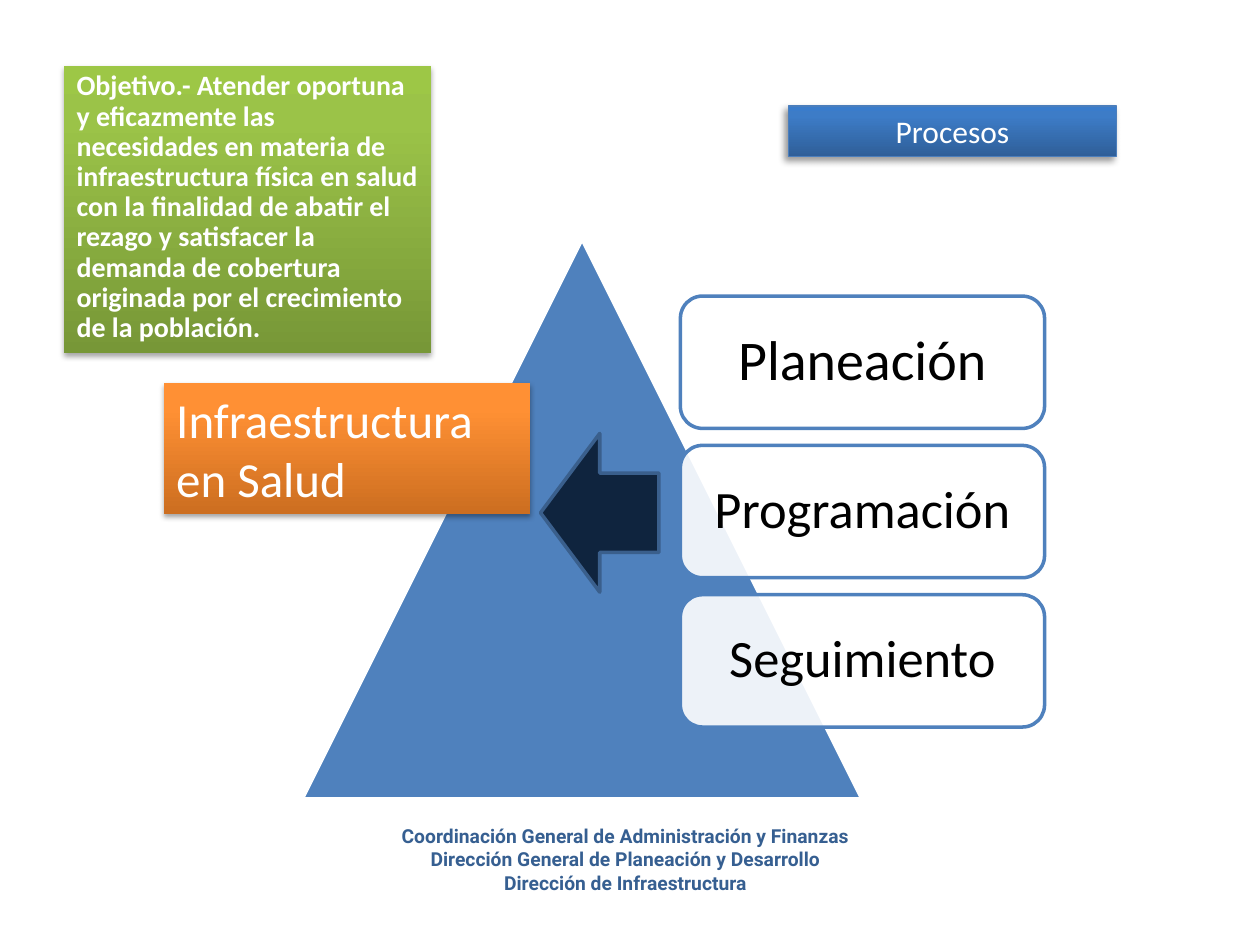
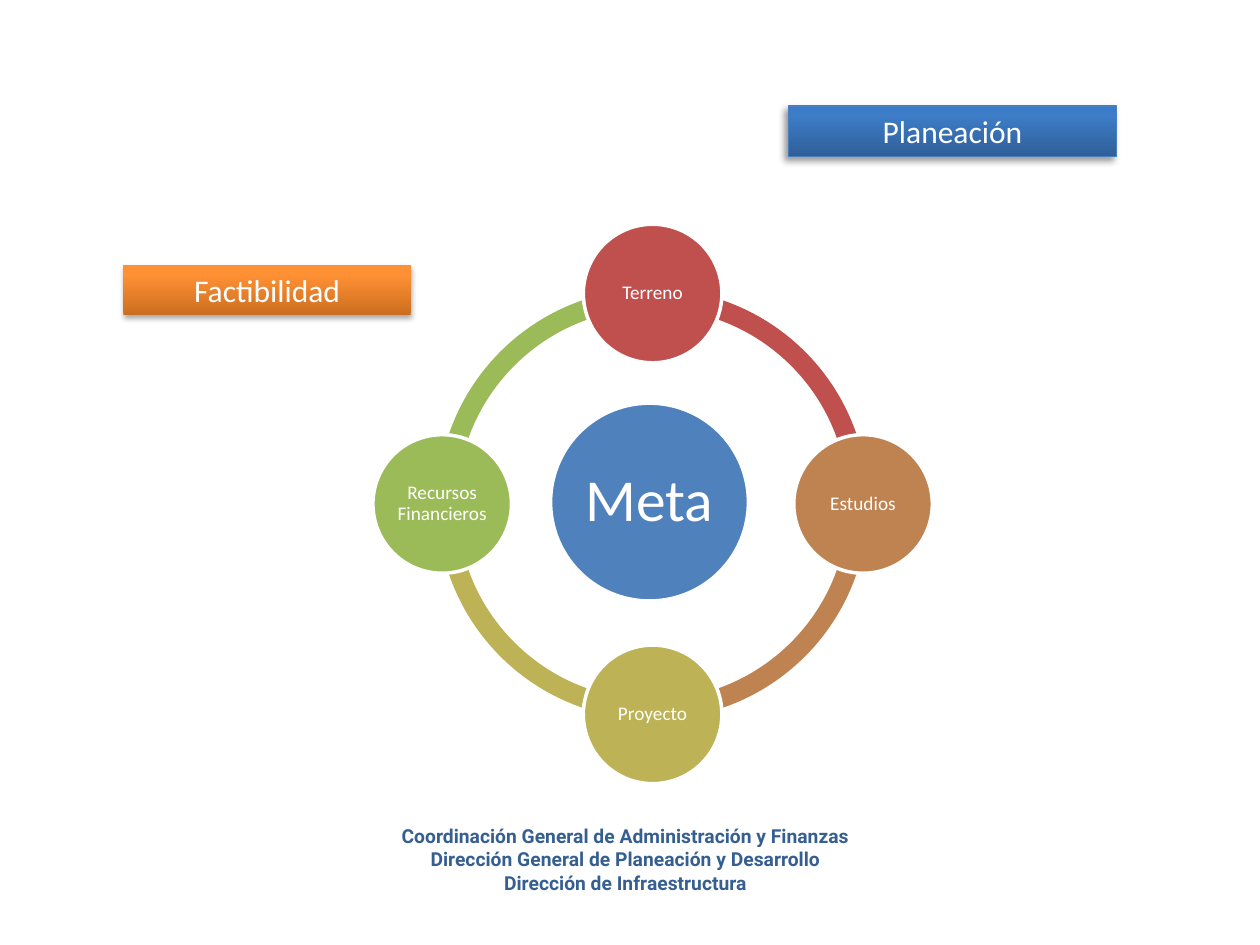
from copy import deepcopy
from math import cos, radians, sin

from lxml import etree
from pptx import Presentation
from pptx import util as u
from pptx.dml.color import RGBColor
from pptx.enum import shapes, text
from pptx.oxml.ns import qn

# Content
FOOTER = [
    "Coordinación General de Administración y Finanzas",
    "Dirección General de Planeación y Desarrollo",
    "Dirección de Infraestructura",
]
GOAL = (
    "Objetivo.- Atender oportuna y eficazmente las necesidades en materia de "
    "infraestructura física en salud con la finalidad de abatir el rezago y "
    "satisfacer la demanda de cobertura originada por el crecimiento de la "
    "población."
)
STEPS = [("Planeación", 32), ("Programación", 30), ("Seguimiento", 30)]
NODES = [  # clockwise from the top
    ("Terreno", "red"),
    ("Estudios", "brown"),
    ("Proyecto", "sand"),
    ("Recursos Financieros", "green"),
]

# Look
INK = {
    "white": "FFFFFF", "black": "000000", "blue": "4F81BD", "edge": "4B7EBC",
    "navy": "0F243E", "rim": "3A5F8C", "foot": "365F91", "red": "C0504D",
    "brown": "BE8351", "sand": "BDB255", "green": "9BBB59",
}
FADES = {  # bottom to top
    "blue": ("2F5F99", "3D7CC7", "3A7CCB"),
    "orange": ("CC6E20", "FF9034", "FF9136"),
    "green": ("779737", "9BC348", "9DC746"),
}
STOPS = (0, 0.8, 1)
SOFT = dict(blur=3.1, dist=1.8, turn=90, alpha=35)
DEEP = dict(blur=4, dist=3, turn=135, alpha=40)

# Grid of one-inch columns and rows
WIDE, HIGH = 10, 7.5
BAND = (6.26, 0.84, 2.6, 0.4)
FOOT = (2.95, 6.49, 4.03, 0.66)
STEP_X, STEP_Y, STEP_W, STEP_H, STEP_GAP = 5.4, 2.35, 2.89, 1.05, 0.135
RING_X, RING_Y, RING_R, NODE_R, ARC_R = 5.18, 4, 1.67, 0.55, 1.71
HUB = (4.37, 3.2, 1.57, 1.57)

KIND = shapes.MSO_SHAPE
MID = text.PP_ALIGN.CENTER


def rgb(name):
    return RGBColor.from_string(INK.get(name, name))


def place(shape, box):
    shape.left, shape.top, shape.width, shape.height = map(u.Inches, box)


def write(shape, lines, size, ink="white", font="Calibri", bold=False,
          align=MID, mid=True, pad=(0.1, 0.05), lead=1, wrap=True):
    """Fill a shape with one paragraph for each line."""
    frame = shape.text_frame
    frame.auto_size = text.MSO_AUTO_SIZE.NONE
    frame.word_wrap = wrap
    frame.vertical_anchor = (
        text.MSO_ANCHOR.MIDDLE if mid else text.MSO_ANCHOR.TOP)
    frame.margin_left = frame.margin_right = u.Inches(pad[0])
    frame.margin_top = frame.margin_bottom = u.Inches(pad[1])
    lines = [lines] if isinstance(lines, str) else lines
    frame.text = "\n".join(lines)
    for para in frame.paragraphs:
        para.alignment, para.line_spacing = align, lead
        face = para.runs[0].font
        face.name, face.size, face.bold = font, u.Pt(size), bold
        face.color.rgb = rgb(ink)


def edge(shape, ink, width):
    if ink:
        shape.line.color.rgb = rgb(ink)
        shape.line.width = u.Pt(width)
    else:
        shape.line.fill.background()


def draw(slide, kind, box, fill, line=None, width=2):
    shape = slide.shapes.add_shape(kind, *map(u.Inches, box))
    shape.shadow.inherit = False
    shape.fill.solid()
    shape.fill.fore_color.rgb = rgb(fill)
    edge(shape, line, width)
    return shape


def fade(shape, name, blur, dist, turn, alpha):
    """Give a shape a three-stop gradient and an outer shadow."""
    shape.fill.gradient()
    shape.fill.gradient_angle = 90
    stops = shape._element.spPr.find(".//" + qn("a:gsLst"))
    stops.append(deepcopy(stops[-1]))
    for stop, spot, ink in zip(shape.fill.gradient_stops, STOPS, FADES[name]):
        stop.position, stop.color.rgb = spot, rgb(ink)
    shape.shadow.inherit = False
    glow = etree.SubElement(
        shape._element.spPr.find(qn("a:effectLst")), qn("a:outerShdw"),
        blurRad=str(u.Pt(blur)), dist=str(u.Pt(dist)),
        dir=str(turn * 60000), rotWithShape="0")
    tone = etree.SubElement(glow, qn("a:srgbClr"), val=INK["black"])
    etree.SubElement(tone, qn("a:alpha"), val=str(alpha * 1000))


def label(slide, box, name, words, size, **look):
    shape = draw(slide, KIND.RECTANGLE, box, "white")
    fade(shape, name, **SOFT)
    write(shape, words, size, mid=False, **look)


def start(deck, title):
    """Add a slide with the title band and the footer."""
    slide = deck.slides.add_slide(deck.slide_layouts[5])
    band = slide.shapes.title
    place(band, BAND)
    edge(band, "edge", 0.75)
    fade(band, "blue", **DEEP)
    write(band, title, 18, mid=False)
    foot = slide.shapes.add_textbox(*map(u.Inches, FOOT))
    write(foot, FOOTER, 11, ink="foot", font="Roboto", bold=True, wrap=False)
    return slide


def steps(deck):
    slide = start(deck, "Procesos")
    draw(slide, KIND.ISOSCELES_TRIANGLE, (2.4, 1.9, 4.44, 4.44),
         "blue", "white")
    for i, (name, size) in enumerate(STEPS):
        top = STEP_Y + i * (STEP_H + STEP_GAP)
        card = draw(slide, KIND.ROUNDED_RECTANGLE,
                    (STEP_X, top, STEP_W, STEP_H), "white", "blue")
        tone = card._element.spPr.find(qn("a:solidFill"))[0]
        etree.SubElement(tone, qn("a:alpha"), val="90000")
        write(card, name, size, ink="black", lead=0.9)
    left = text.PP_ALIGN.LEFT
    label(slide, (1.3, 3.04, 2.91, 1.04), "orange",
          "Infraestructura en Salud", 28, align=left)
    draw(slide, KIND.LEFT_ARROW, (4.29, 3.44, 0.94, 1.26), "navy", "rim")
    label(slide, (0.51, 0.52, 2.91, 2.28), "green", GOAL, 16,
          bold=True, align=left, lead=0.9)


def cycle(deck):
    slide = start(deck, "Planeación")
    turns = [i * 90 - 90 for i in range(len(NODES))]
    for turn, (_, ink) in zip(turns, NODES):
        arc = draw(slide, KIND.BLOCK_ARC,
                   (RING_X - ARC_R, RING_Y - ARC_R, 2 * ARC_R, 2 * ARC_R), ink)
        # Angles are stored as 60000ths of a degree, scaled by 100000
        for i, value in enumerate(
                (turn % 360 * 0.6, (turn + 90) % 360 * 0.6, 0.046)):
            arc.adjustments[i] = value
    hub = draw(slide, KIND.OVAL, HUB, "blue", "white")
    write(hub, "Meta", 34, pad=(0, 0), lead=0.9)
    for turn, (name, ink) in zip(turns, NODES):
        x = RING_X + RING_R * cos(radians(turn)) - NODE_R
        y = RING_Y + RING_R * sin(radians(turn)) - NODE_R
        node = draw(slide, KIND.OVAL, (x, y, 2 * NODE_R, 2 * NODE_R),
                    ink, "white")
        write(node, name, 11, pad=(0, 0), lead=0.9)
    label(slide, (0.98, 2.1, 2.28, 0.4), "orange", "Factibilidad", 18)


def main():
    deck = Presentation()
    deck.slide_width, deck.slide_height = u.Inches(WIDE), u.Inches(HIGH)
    steps(deck)
    cycle(deck)
    deck.save("out.pptx")


if __name__ == "__main__":
    main()
